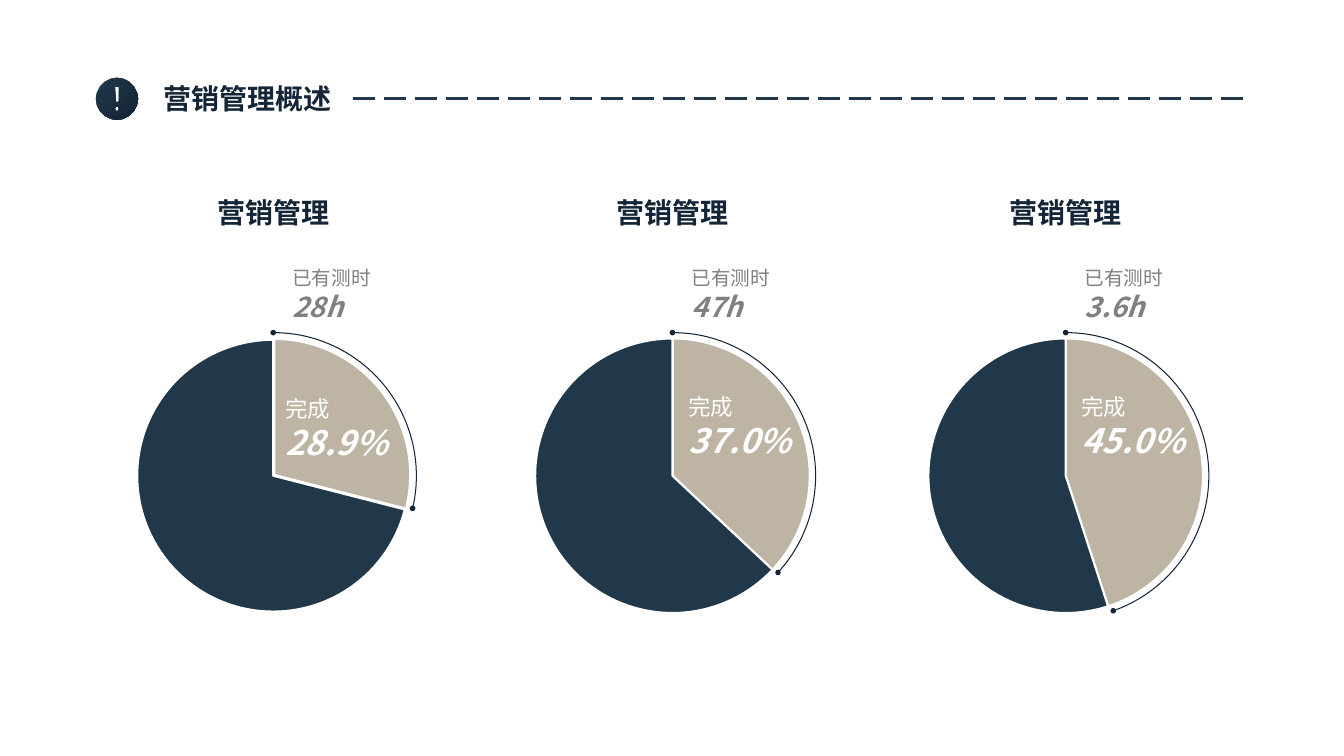
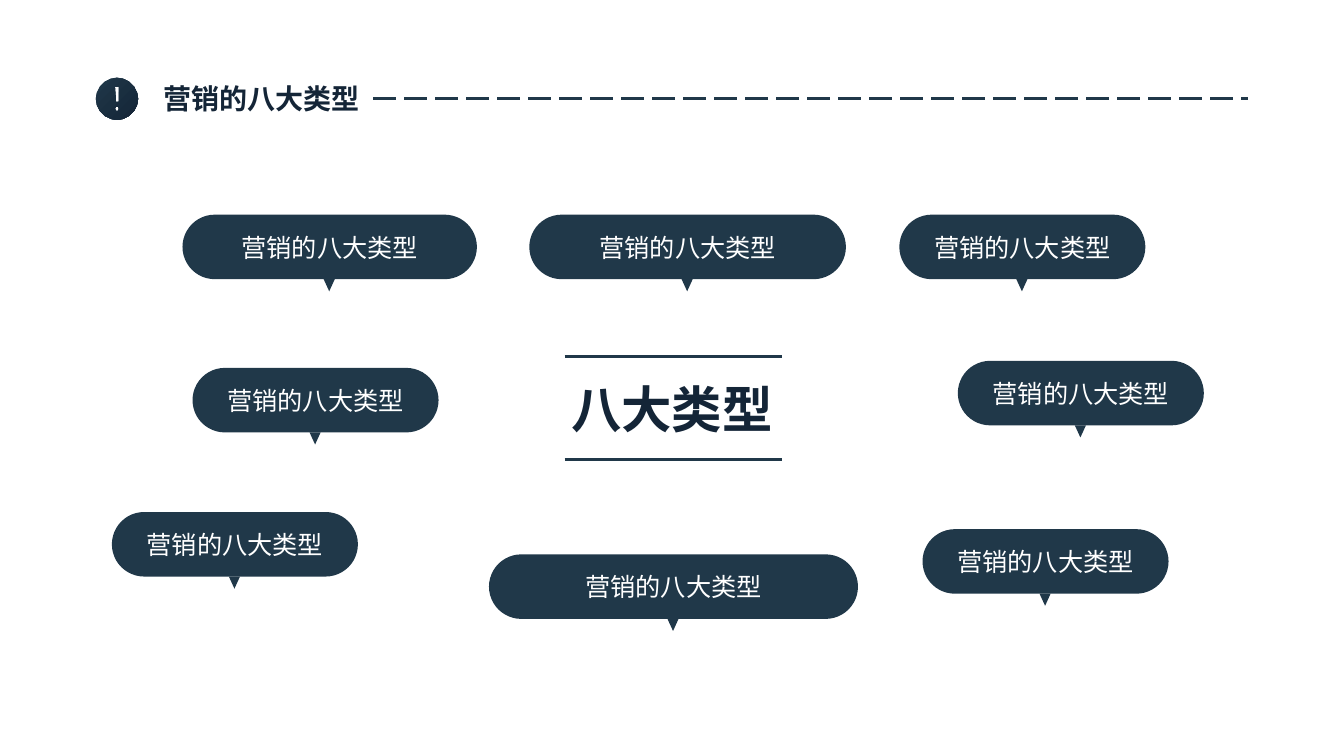
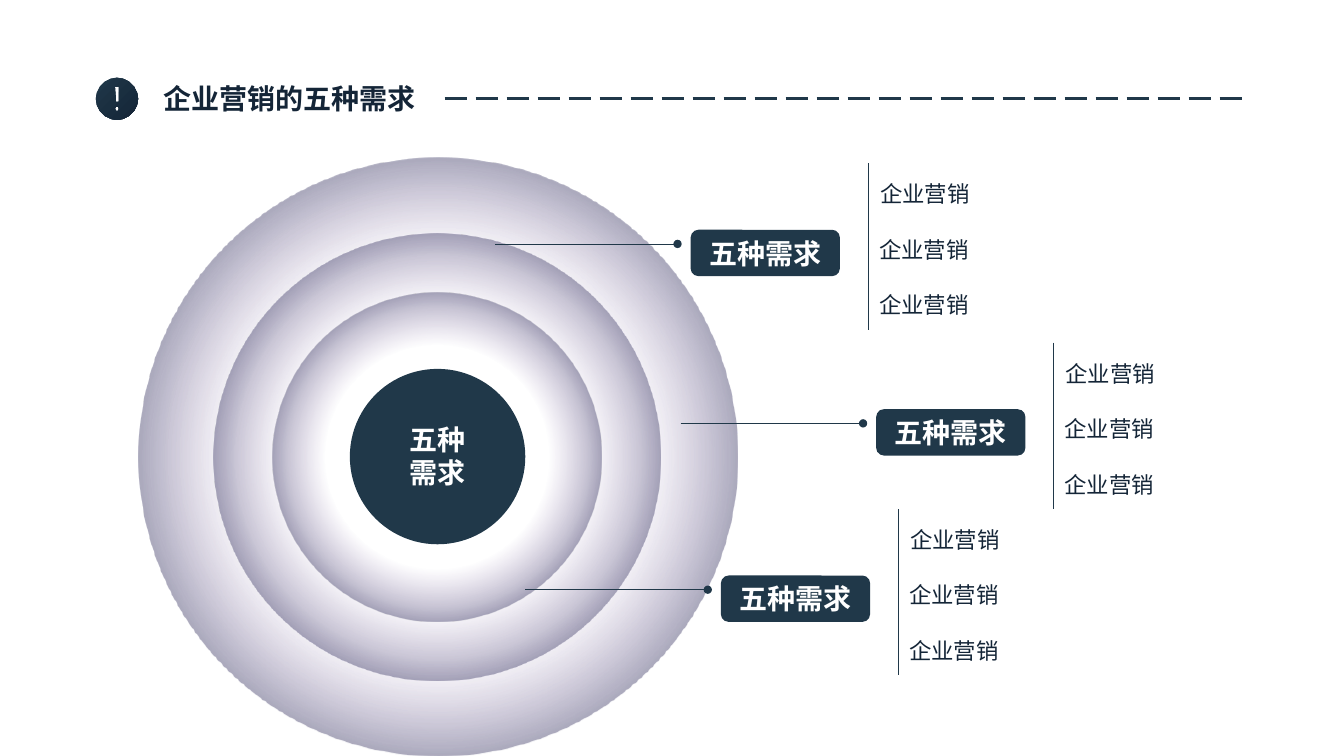
from math import cos, sin, tau

from lxml import etree
from pptx import Presentation
from pptx.chart.data import CategoryChartData
from pptx.dml.color import RGBColor
from pptx.enum.chart import XL_CHART_TYPE as ChartType
from pptx.enum.dml import MSO_LINE
from pptx.enum.shapes import MSO_CONNECTOR, MSO_SHAPE as Preset
from pptx.enum.text import MSO_ANCHOR as Anchor, PP_ALIGN as Align
from pptx.oxml.ns import qn
from pptx.util import Pt

PX = 9144  # 100 px to the inch
FONT = "Noto Sans CJK SC"
COLORS = {
    "navy": "203849",
    "ink": "142537",
    "sand": "BDB4A4",
    "grey": "808080",
    "violet": "8064A2",
    "white": "FFFFFF",
    "black": "000000",
}
RGB = {name: RGBColor.from_string(code) for name, code in COLORS.items()}


def add_block(slide, preset, box, lines=(), fill=None, align=Align.LEFT, inset=(10, 5)):
    """Add a shape, or a text box if preset is None; lines are (text, size, color, style)."""
    box = [v * PX for v in box]
    if preset is None:
        block = slide.shapes.add_textbox(*box)
    else:
        block = slide.shapes.add_shape(preset, *box)
        block.shadow.inherit = False
        block.line.fill.background()
        if fill:
            block.fill.solid()
            block.fill.fore_color.rgb = RGB[fill]
        else:
            block.fill.background()
    frame = block.text_frame
    frame.word_wrap = True
    frame.vertical_anchor = Anchor.TOP if preset is None else Anchor.MIDDLE
    frame.margin_left = frame.margin_right = inset[0] * PX
    frame.margin_top = frame.margin_bottom = inset[1] * PX
    for i, (text, size, color, style) in enumerate(lines):
        para = frame.add_paragraph() if i else frame.paragraphs[0]
        para.alignment = align
        run = para.add_run()
        run.text = text
        run.font.size = Pt(size)
        run.font.name = FONT
        run.font.color.rgb = RGB[color]
        run.font.bold = "b" in style
        run.font.italic = "i" in style
        east_asian = etree.SubElement(run.font._element, qn("a:ea"))
        east_asian.set("typeface", FONT)
    return block


def add_rule(slide, x1, y1, x2, y2, width, dash=None, dot=False):
    rule = slide.shapes.add_connector(
        MSO_CONNECTOR.STRAIGHT, x1 * PX, y1 * PX, x2 * PX, y2 * PX)
    rule.line.color.rgb = RGB["navy"]
    rule.line.width = Pt(width)
    if dash:
        rule.line.dash_style = dash
    if dot:
        etree.SubElement(rule.line._get_or_add_ln(), qn("a:tailEnd")).set("type", "oval")
    etree.SubElement(rule._element.spPr, qn("a:effectLst"))


prs = Presentation()
prs.slide_width, prs.slide_height = 1333 * PX, 750 * PX

# Shared header: exclamation badge, title, dashed rule
headers = [("营销管理概述", 350, 243), ("营销的八大类型", 370, 243), ("企业营销的五种需求", 441, 289)]
badge_circles = [(116, 98, 21, 20), (116, 108, 2, 6)]  # centre, radius, corners
mark_bar = [(118, 86), (118, 101), (115, 101), (114, 86)]
badge_outlines = [
    [(cx + r * cos(tau * k / n), cy + r * sin(tau * k / n)) for k in range(n)]
    for cx, cy, r, n in badge_circles
] + [mark_bar]
slides = []
for title, rule_start, title_width in headers:
    slide = prs.slides.add_slide(prs.slide_layouts[6])
    slides.append(slide)
    builder = slide.shapes.build_freeform(*badge_outlines[0][0], scale=PX)
    for i, outline in enumerate(badge_outlines):
        if i:
            builder.move_to(*outline[0])
        builder.add_line_segments(outline[1:], close=True)
    badge = builder.convert_to_shape()
    badge.shadow.inherit = False
    badge.line.fill.background()
    badge.fill.gradient()
    badge.fill.gradient_angle = 315
    for stop, position, color in zip(badge.fill.gradient_stops, (0, 1), ("navy", "ink")):
        stop.position = position
        stop.color.rgb = RGB[color]
    add_block(slide, None, (152, 76, title_width, 44), [(title, 20, "ink", "b")])
    add_rule(slide, rule_start, 98, 1238, 98, 2, MSO_LINE.LONG_DASH)
overview, types, needs = slides

# Slide 1: three completion pies, each with an arc around the finished share
progress = [  # centre, values, explosion, percent, percent position, hours, arc end
    (271, (29, 71), 1, "28.9%", (273, 387), "28h", 7.9),
    (667, (37, 63), 0, "37.0%", (673, 385), "47h", 25.49),
    (1057, (45, 55), 0, "45.0%", (1063, 385), "3.6h", 42.36),
]
for centre, shares, explosion, percent, percent_at, hours, arc_end in progress:
    data = CategoryChartData()
    data.categories = ["1", "2"]
    data.add_series("Series 1", shares)
    pie = overview.shapes.add_chart(
        ChartType.PIE, (centre - 225) * PX, 322 * PX, 450 * PX, 300 * PX, data).chart
    pie.has_legend = False
    pie.has_title = False
    pie.font.size = Pt(10)
    pie.font.name = FONT
    pie.font.color.rgb = RGB["black"]
    pie.plots[0].vary_by_categories = True
    for i, color in enumerate(("sand", "navy")):
        wedge = pie.plots[0].series[0].points[i].format
        wedge.fill.solid()
        wedge.fill.fore_color.rgb = RGB[color]
        wedge.line.color.rgb = RGB["white"]
        wedge.line.width = Pt(1.5)
    if explosion:
        done = pie.plots[0].series[0]._element.find(qn("c:dPt"))
        pulled = etree.Element(qn("c:explosion"), val=str(explosion))
        done.find(qn("c:spPr")).addprevious(pulled)

    add_block(overview, None, (centre - 70, 189, 140, 44),
              [("营销管理", 20, "ink", "b")], align=Align.CENTER)
    add_block(overview, None, (*percent_at, 123, 77),
              [("完成", 16, "white", ""), (percent, 24, "white", "bi")])
    add_block(overview, None, (centre + 9, 259, 99, 67),
              [("已有测时", 14, "grey", ""), (hours, 20, "grey", "bi")])
    arc = add_block(overview, Preset.ARC, (centre - 142, 330, 284, 284))
    arc.adjustments[0] = 162
    arc.adjustments[1] = arc_end
    arc.line.color.rgb = RGB["ink"]
    arc.line.width = Pt(0.75)
    for end in ("a:headEnd", "a:tailEnd"):
        etree.SubElement(arc.line._get_or_add_ln(), qn(end), type="oval", w="sm", len="sm")

# Slide 2: eight speech pills around the central phrase
pills = [  # left, top, width
    (181, 213, 292), (525, 213, 314), (485, 550, 366), (892, 213, 244),
    (915, 525, 244), (950, 358, 244), (111, 508, 244), (191, 365, 244),
]
for left, top, width in pills:
    pill = add_block(types, Preset.ROUNDED_RECTANGLE, (left, top, width, 64), fill="navy")
    pill.adjustments[0] = 0.5
    add_block(types, Preset.RECTANGLE, (left + 23, top + 12, width - 46, 40),
              [("营销的八大类型", 18, "white", "")], "navy", Align.CENTER)
    pointer = add_block(types, Preset.ISOSCELES_TRIANGLE,
                        (left + width // 2 - 6, top + 64, 11, 12), fill="navy")
    pointer.rotation = 180
add_block(types, None, (551, 370, 231, 71), [("八大类型", 36, "ink", "b")], align=Align.CENTER)
for y in (354, 456):
    add_rule(types, 560, y, 776, y, 2.25)

# Slide 3: rings fading towards the core
core_x, core_y = 434, 453
for diameter in (594, 443, 327):
    corner = core_x - (diameter + 1) // 2, core_y - diameter // 2
    ring = add_block(needs, Preset.OVAL, (*corner, diameter, diameter))
    ring.fill.gradient()
    inner, outer = ring.fill.gradient_stops
    inner.position, outer.position = 0.48, 0.95
    inner.color.rgb, outer.color.rgb = RGB["violet"], RGB["navy"]
    gradient = ring._element.spPr.find(qn("a:gradFill"))
    clear = gradient.find(".//" + qn("a:srgbClr"))
    etree.SubElement(clear, qn("a:alpha")).set("val", "0")
    gradient.remove(gradient.find(qn("a:lin")))
    radial = etree.SubElement(gradient, qn("a:path"), path="circle")
    etree.SubElement(radial, qn("a:fillToRect"), l="50000", t="50000", r="50000", b="50000")
add_block(needs, Preset.OVAL, (core_x - 87, core_y - 87, 174, 174), fill="navy")
add_block(needs, None, (376, 414, 115, 77),
          [("五种", 20, "white", "b"), ("需求", 20, "white", "b")], align=Align.CENTER)

# Slide 3: branches with a tag, a leader, a bar and three notes
for left, top in [(715, 571), (685, 228), (869, 406)]:
    add_block(needs, Preset.ROUNDED_RECTANGLE, (left, top, 148, 46),
              [("五种需求", 20, "white", "b")], "navy", inset=(16, 4))
    for i, indent in enumerate((178, 177, 177)):
        add_block(needs, None, (left + indent, top - 54 + 55 * i, 122, 37),
                  [("企业营销", 16, "ink", "")])
    add_rule(needs, left - 194, top + 14, left - 13, top + 14, 0.5, dot=True)
    add_rule(needs, left + 176, top - 66, left + 176, top + 99, 0.75)

prs.save("out.pptx")
